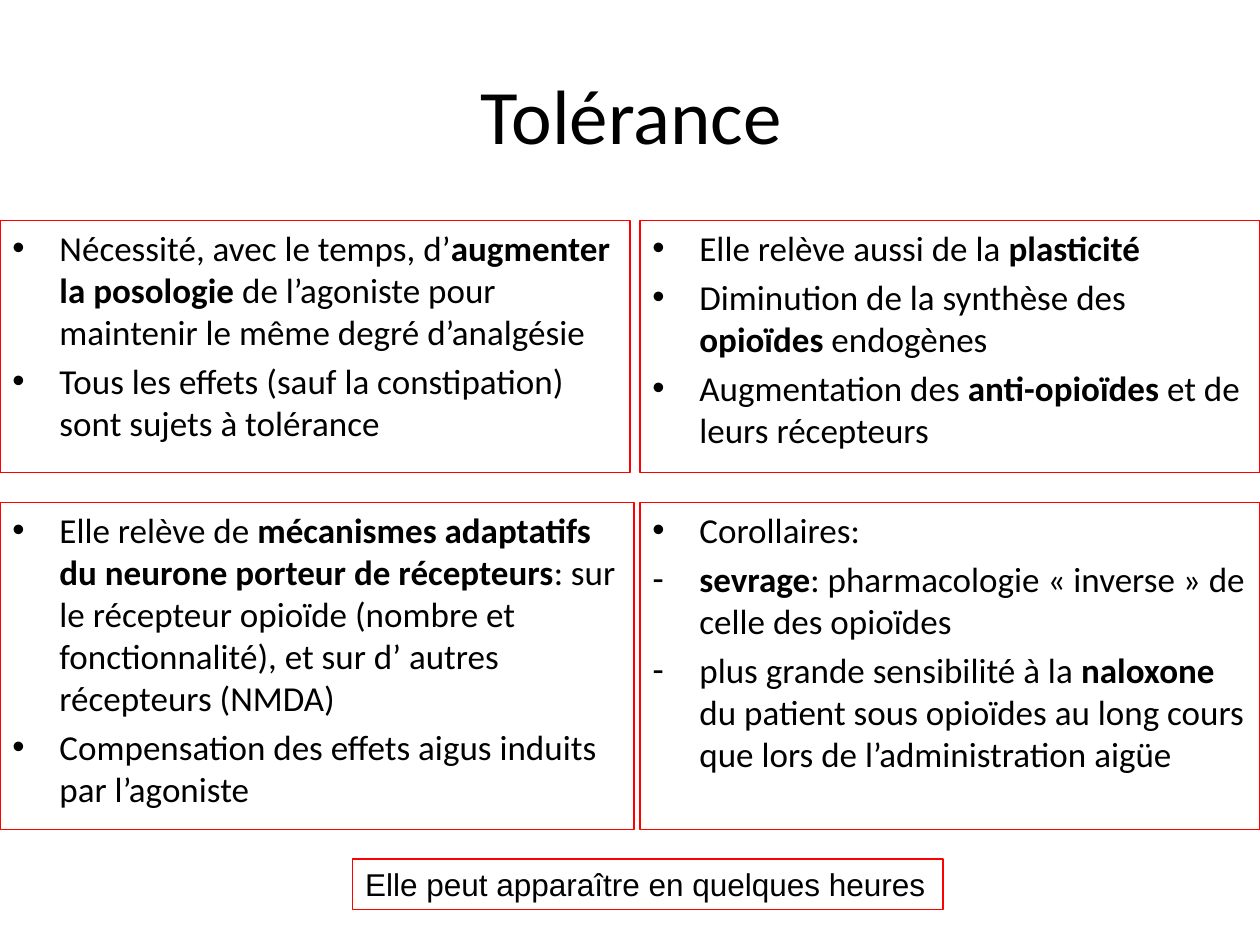
from lxml.etree import SubElement
from pptx import Presentation
from pptx.dml.color import RGBColor as RGB
from pptx.enum.shapes import MSO_SHAPE as Shape
from pptx.enum.text import MSO_ANCHOR as Anchor, PP_ALIGN as Align
from pptx.oxml.ns import qn
from pptx.util import Cm, Pt

BLACK = RGB(0, 0, 0)
RED = RGB(255, 0, 0)


class Deck:
    font = "Calibri"
    indent = Cm(0.95)

    def __init__(self, wide, high):
        self.prs = Presentation()
        self.prs.slide_width, self.prs.slide_height = Cm(wide), Cm(high)
        self.slide = self.prs.slides.add_slide(self.prs.slide_layouts[6])

    def style(self, para, size, font=None):
        para.font.size = Pt(size)
        para.font.name = font or self.font
        para.font.color.rgb = BLACK

    def title(self, text, *area):
        frame = self.slide.shapes.add_textbox(*map(Cm, area)).text_frame
        frame.word_wrap = True
        frame.vertical_anchor = Anchor.MIDDLE
        para = frame.paragraphs[0]
        para.text = text
        para.alignment = Align.CENTER
        self.style(para, 44)

    def frame(self, *area):
        """Add a red outlined box and return its text frame."""
        box = self.slide.shapes.add_shape(Shape.RECTANGLE, *map(Cm, area))
        box.shadow.inherit = False
        box.fill.background()
        box.line.color.rgb = RED
        box.line.width = Pt(0.75)
        box.text_frame.vertical_anchor = Anchor.TOP
        return box.text_frame

    def bullet(self, para, mark):
        props = para._p.get_or_add_pPr()
        props.set("marL", str(self.indent))
        props.set("indent", str(-self.indent))
        SubElement(props, qn("a:buFont"), typeface="Arial")
        SubElement(props, qn("a:buChar"), char=mark)

    def points(self, items, *area):
        """Fill a box with (mark, text) items; ** surrounds bold words."""
        frame = self.frame(*area)
        frame.word_wrap = True
        for i, (mark, text) in enumerate(items):
            para = frame.add_paragraph() if i else frame.paragraphs[0]
            para.alignment = Align.LEFT
            para.space_before = Pt(4)
            self.bullet(para, mark)
            self.style(para, 20)
            for j, part in enumerate(text.split("**")):
                if part:
                    run = para.add_run()
                    run.text = part
                    if j % 2:
                        run.font.bold = True

    def note(self, text, *area):
        frame = self.frame(*area)
        frame.word_wrap = False
        para = frame.paragraphs[0]
        para.text = text
        para.alignment = Align.LEFT
        self.style(para, 18, "Arial")


NEED = [
    ("•", "Nécessité, avec le temps, d’**augmenter la posologie **de l’agoniste "
          "pour maintenir le même degré d’analgésie"),
    ("•", "Tous les effets (sauf la constipation) sont sujets à tolérance"),
]
CHANGE = [
    ("•", "Elle relève aussi de la **plasticité**"),
    ("•", "Diminution de la synthèse des **opioïdes** endogènes"),
    ("•", "Augmentation des **anti-opioïdes** et de leurs récepteurs"),
]
ADAPT = [
    ("•", "Elle relève de **mécanismes adaptatifs du neurone porteur de "
          "récepteurs**: sur le récepteur opioïde (nombre et fonctionnalité), "
          "et sur d’ autres récepteurs (NMDA)"),
    ("•", "Compensation des effets aigus induits par l’agoniste"),
]
RESULT = [
    ("•", "Corollaires:"),
    ("-", "**sevrage**: pharmacologie « inverse » de celle des opioïdes"),
    ("-", "plus grande sensibilité à la **naloxone** du patient sous opioïdes "
          "au long cours que lors de l’administration aigüe"),
]


def main():
    deck = Deck(25.4, 19.05)
    deck.title("Tolérance", 1.3, 0.71, 22.86, 3.18)

    # Two rows of boxes: top, height, left width, left and right items
    right = 12.9
    rows = [(4.45, 5.08, 12.7, NEED, CHANGE),
            (10.13, 6.6, 12.78, ADAPT, RESULT)]
    for top, high, wide, first, second in rows:
        deck.points(first, 0, top, wide, high)
        deck.points(second, right, top, 25.4 - right, high)

    # Closing remark
    deck.note("Elle peut apparaître en quelques heures", 7.11, 17.32, 11.9, 1.02)
    deck.prs.save("out.pptx")


if __name__ == "__main__":
    main()
